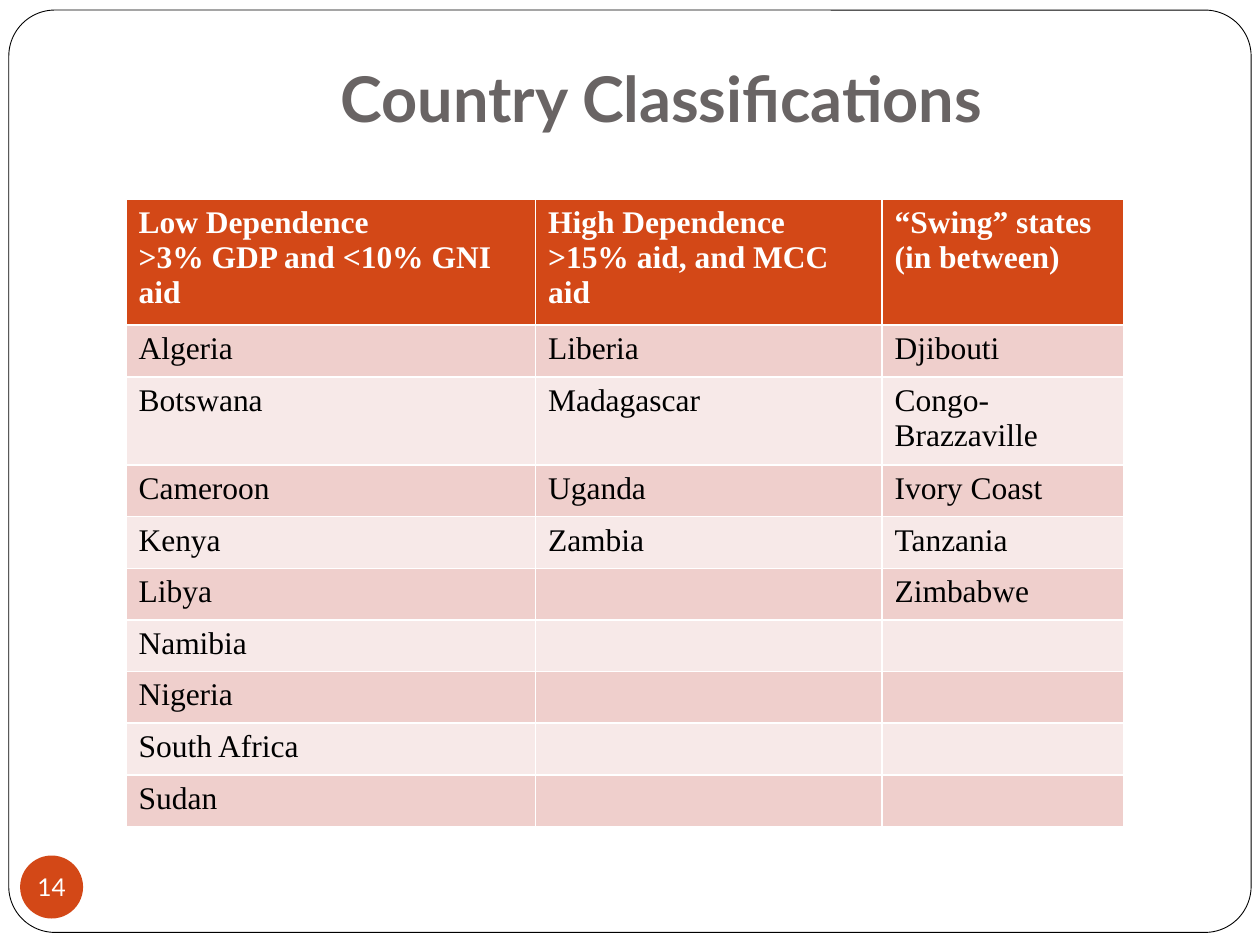
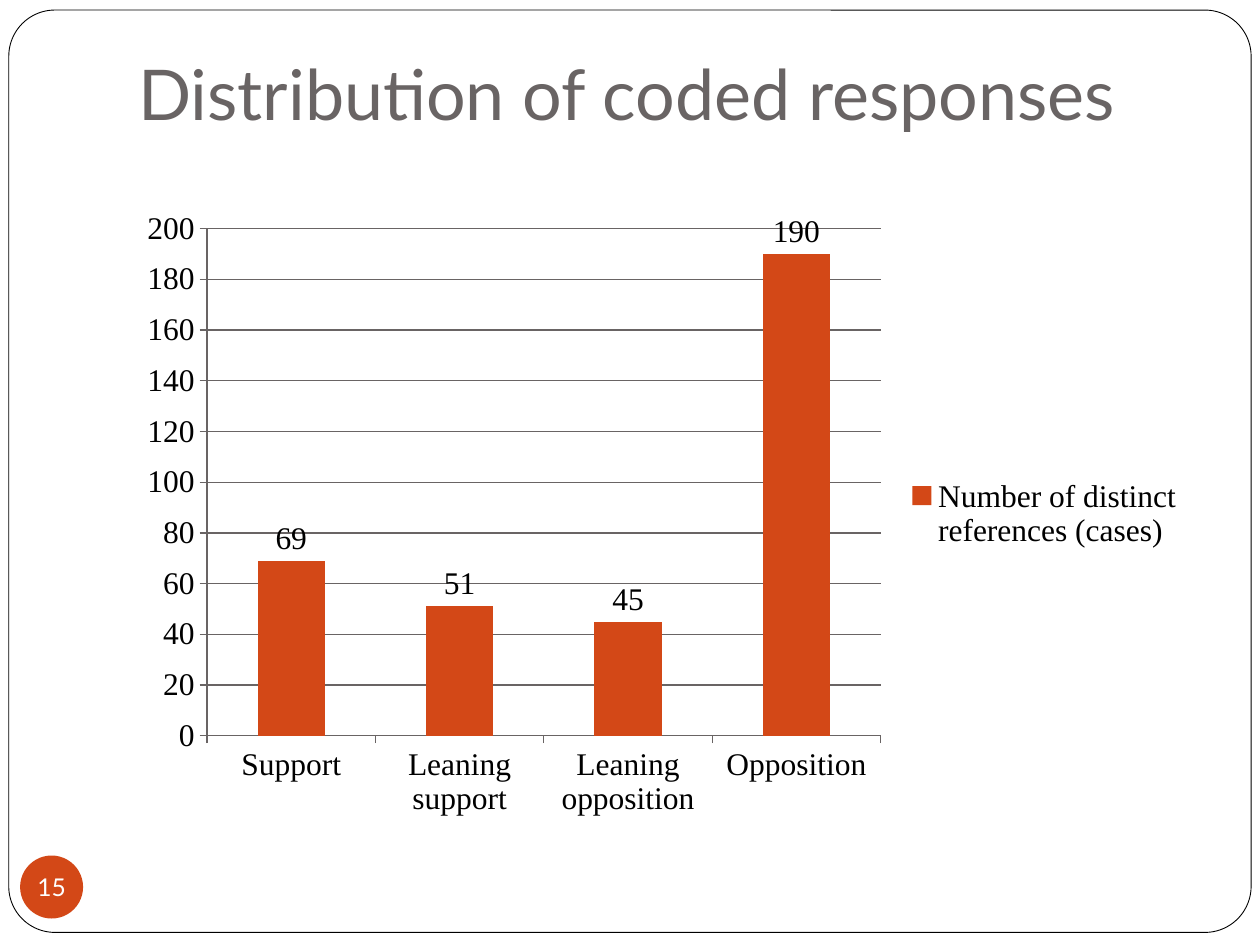
from itertools import zip_longest

from lxml import etree
from pptx import Presentation
from pptx.chart.data import CategoryChartData
from pptx.dml.color import RGBColor
from pptx.enum.chart import XL_CHART_TYPE as ChartType, XL_LABEL_POSITION as LabelSpot
from pptx.enum.chart import XL_LEGEND_POSITION as LegendSpot, XL_TICK_MARK as Tick
from pptx.enum.shapes import MSO_SHAPE as Shape
from pptx.enum.text import MSO_ANCHOR as Anchor, PP_ALIGN as Align
from pptx.util import Inches, Pt

ORANGE = RGBColor(0xD3, 0x48, 0x17)
GREY = RGBColor(0x69, 0x64, 0x64)
ROSE = RGBColor(0xEF, 0xCF, 0xCC)
PALE_ROSE = RGBColor(0xF7, 0xE9, 0xE8)
BLACK = RGBColor(0, 0, 0)
WHITE = RGBColor(0xFF, 0xFF, 0xFF)
HEADING_FONT, BODY_FONT = "Lato", "Times New Roman"
BODY_SIZE = Pt(18)
LEFT, TOP, WIDTH = Inches(1), Inches(1.58), Inches(8.5)


def style_font(font, name, size, color, bold=False):
    font.name, font.size, font.bold = name, size, bold
    font.color.rgb = color


def add_page(deck, number, title, size, bold, align):
    """Add a framed page with its title and numbered badge."""
    page = deck.slides.add_slide(deck.slide_layouts[6])
    frame = page.shapes.add_shape(
        Shape.ROUNDED_RECTANGLE, Inches(0.07), Inches(0.08), Inches(9.86), Inches(7.32))
    frame.adjustments[0] = 0.05
    frame.shadow.inherit = False
    frame.fill.solid()
    frame.fill.fore_color.rgb = WHITE
    frame.line.color.rgb = BLACK
    frame.line.width = Pt(0.5)

    heading = page.shapes.add_textbox(LEFT, Inches(0.3), WIDTH, Inches(0.87)).text_frame
    heading.word_wrap = True
    heading.vertical_anchor = Anchor.BOTTOM
    heading.margin_bottom = Inches(0.1)
    para = heading.paragraphs[0]
    para.text, para.alignment = title, align
    style_font(para.font, HEADING_FONT, size, GREY, bold)

    badge = page.shapes.add_shape(
        Shape.OVAL, Inches(0.16), Inches(6.79), Inches(0.5), Inches(0.5))
    badge.shadow.inherit = False
    badge.fill.solid()
    badge.fill.fore_color.rgb = ORANGE
    badge.line.fill.background()
    label = badge.text_frame
    label.word_wrap = False
    label.vertical_anchor = Anchor.MIDDLE
    label.margin_left = label.margin_right = label.margin_top = label.margin_bottom = 0
    para = label.paragraphs[0]
    para.text, para.alignment = str(number), Align.CENTER
    style_font(para.font, HEADING_FONT, Pt(14), WHITE)
    return page


deck = Presentation()
deck.slide_width, deck.slide_height = Inches(10), Inches(7.5)

# Country classifications
page = add_page(deck, 14, "Country Classifications", Pt(36), True, Align.CENTER)
groups = [
    (3.25, "Low Dependence\n>3% GDP and <10% GNI aid",
     ["Algeria", "Botswana", "Cameroon", "Kenya", "Libya",
      "Namibia", "Nigeria", "South Africa", "Sudan"]),
    (2.75, "High Dependence\n>15% aid, and MCC aid",
     ["Liberia", "Madagascar", "Uganda", "Zambia"]),
    (1.92, "“Swing” states\n(in between)",
     ["Djibouti", "Congo-Brazzaville", "Ivory Coast", "Tanzania", "Zimbabwe"]),
]
widths, headers, countries = zip(*groups)
rows = [headers, *zip_longest(*countries, fillvalue="")]
row_height = Inches(0.41)
table = page.shapes.add_table(
    len(rows), len(groups), LEFT, TOP, Inches(sum(widths)), row_height * len(rows)).table
for column, width in zip(table.columns, widths):
    column.width = Inches(width)
for r, row in enumerate(rows):
    table.rows[r].height = row_height
    is_header = r == 0
    for c, text in enumerate(row):
        cell = table.cell(r, c)
        cell.fill.solid()
        cell.fill.fore_color.rgb = ORANGE if is_header else ROSE if r % 2 else PALE_ROSE
        cell.text = text
        for para in cell.text_frame.paragraphs:
            style_font(para.font, BODY_FONT, BODY_SIZE, WHITE if is_header else BLACK, is_header)

# Distribution of coded responses
page = add_page(deck, 15, "Distribution of coded responses", Pt(40), False, Align.LEFT)
responses = CategoryChartData()
responses.categories = ["Support", "Leaning support", "Leaning opposition", "Opposition"]
responses.add_series("Number of distinct references (cases)", [69, 51, 45, 190])
chart = page.shapes.add_chart(
    ChartType.COLUMN_CLUSTERED, LEFT, TOP, WIDTH, Inches(5), responses).chart
style_font(chart.font, BODY_FONT, BODY_SIZE, BLACK)
chart.has_title = False
chart.has_legend = True
chart.legend.position = LegendSpot.RIGHT
chart.legend.include_in_layout = False

for axis in (chart.category_axis, chart.value_axis):
    axis.major_tick_mark = Tick.OUTSIDE
    axis.minor_tick_mark = Tick.NONE
    axis.format.line.color.rgb = GREY
    axis.format.line.width = Pt(0.75)
values = chart.value_axis
values.minimum_scale, values.maximum_scale, values.major_unit = 0, 200, 20
values.has_major_gridlines = True
values.major_gridlines.format.line.color.rgb = GREY
values.major_gridlines.format.line.width = Pt(0.75)

plot = chart.plots[0]
plot.gap_width = 150
plot.vary_by_categories = False
bars = plot.series[0]
bars.format.fill.solid()
bars.format.fill.fore_color.rgb = ORANGE
labels = bars.data_labels
labels.show_value = True
labels.position = LabelSpot.OUTSIDE_END
style_font(labels.font, BODY_FONT, BODY_SIZE, BLACK)

deck.save("out.pptx")
